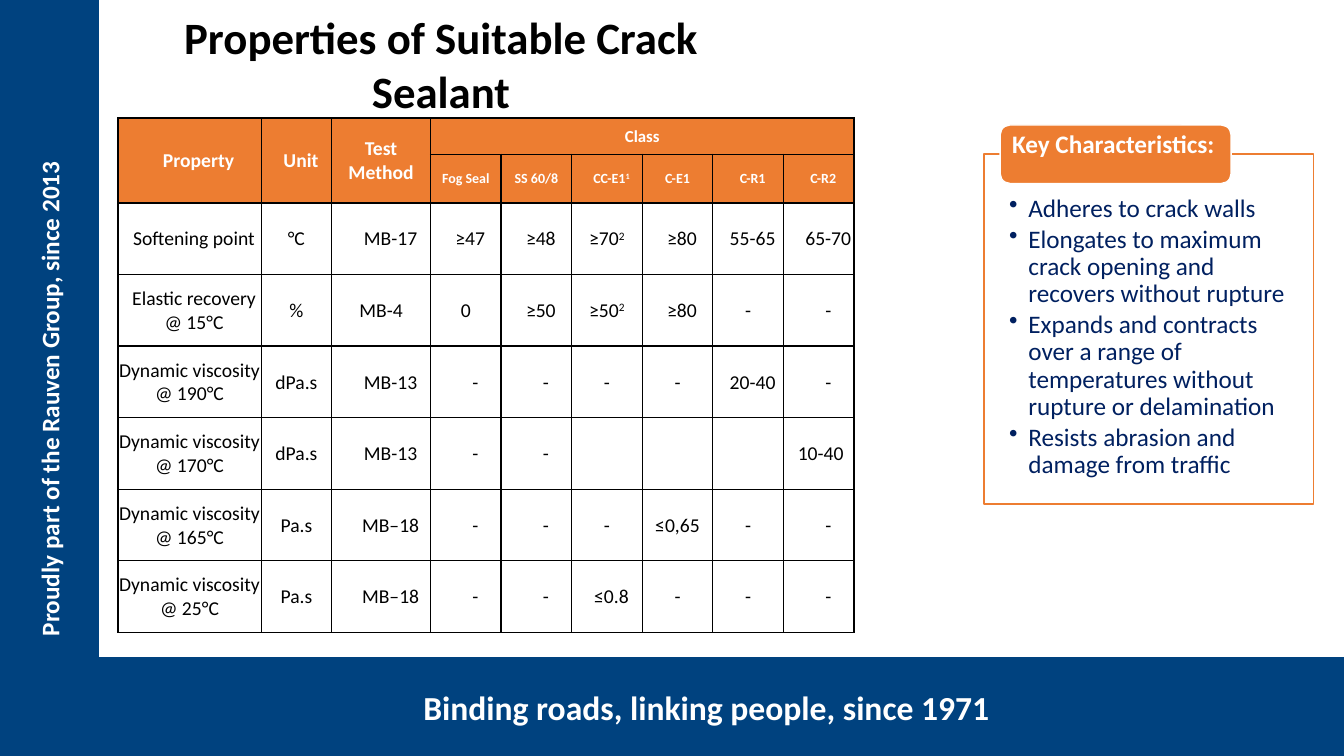
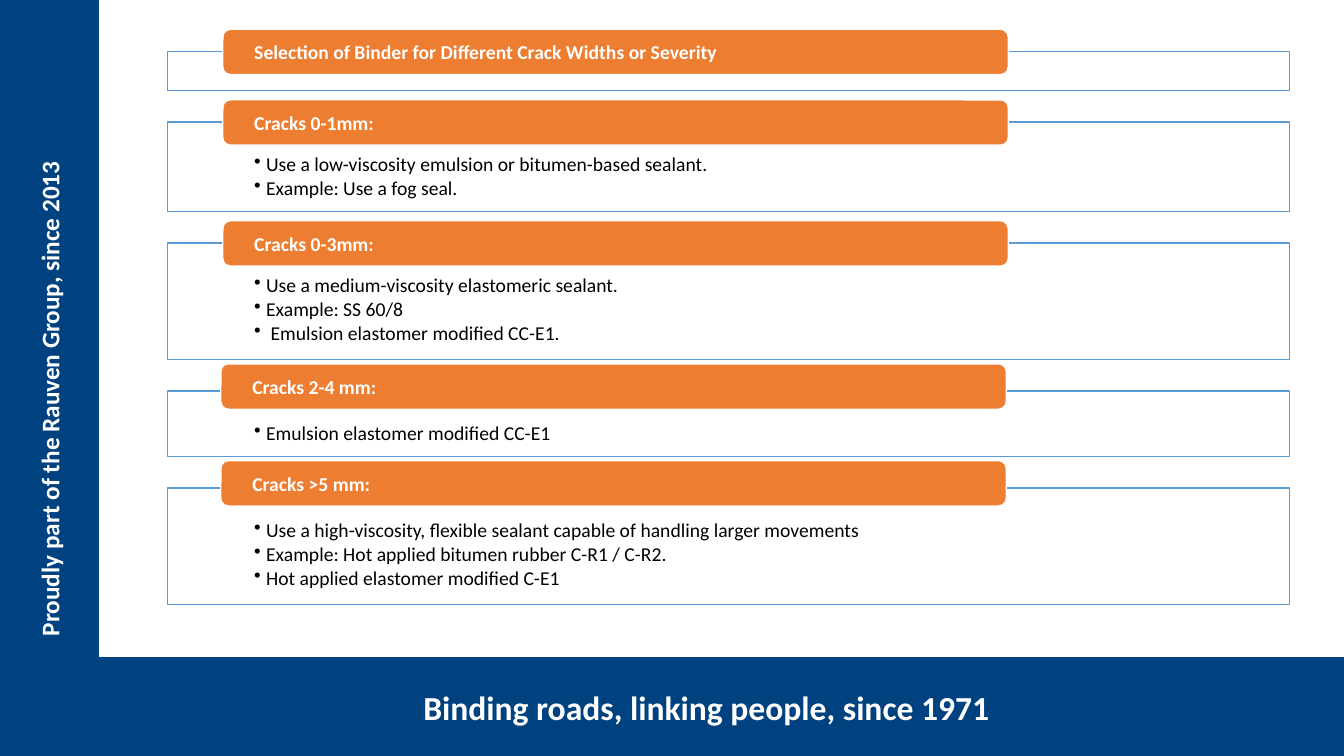
import pptx
import pptx.dml.color
import pptx.enum.shapes
import pptx.enum.text
import pptx.oxml
import pptx.oxml.ns
import pptx.util

PX = 9144
COLORS = {
    "navy": "00427F",
    "orange": "ED7D31",
    "blue": "5B9BD5",
    "ink": "002060",
    "black": "000000",
    "white": "FFFFFF",
}
SHAPES = pptx.enum.shapes.MSO_SHAPE
ANCHOR = pptx.enum.text.MSO_ANCHOR
ALIGN = pptx.enum.text.PP_ALIGN
MARGINS = ("margin_left", "margin_top", "margin_right", "margin_bottom")
TITLE_ONLY, BLANK = 5, 6

KEY_POINTS = [
    "Adheres to crack walls",
    "Elongates to maximum crack opening and recovers without rupture",
    "Expands and contracts over a range of temperatures without rupture or delamination",
    "Resists abrasion and damage from traffic",
]

COLUMN_WIDTHS = [142, 70, 98] + [70] * 6
ROW_HEIGHTS = [36] * 2 + [71] * 6
HEADINGS = [("Property", 19), ("Unit", 10), ("Test Method", 1)]
CLASSES = [("Fog Seal", 1), ("SS 60/8", 1), ("CC-E1^1", 10), ("C-E1", 1), ("C-R1", 10), ("C-R2", 10)]
PROPERTIES = [
    (["Softening point", "°C", "MB-17", "≥47", "≥48", "≥70^2", "≥80", "55-65", "65-70"],
     [10, 1, 20, 10, 10, 1, 10, 10, 20]),
    (["Elastic recovery @ 15°C", "%", "MB-4", "0", "≥50", "≥50^2", "≥80", "-", "-"],
     [10, 1, 1, 1, 10, 1, 10, 1, 20]),
    (["Dynamic viscosity @ 190°C", "dPa.s", "MB-13", "-", "-", "-", "-", "20-40", "-"],
     [1, 1, 20, 20, 20, 1, 1, 10, 20]),
    (["Dynamic viscosity @ 170°C", "dPa.s", "MB-13", "-", "-", "", "", "", "10-40"],
     [1, 1, 20, 20, 20, 1, 1, 1, 5]),
    (["Dynamic viscosity @ 165°C", "Pa.s", "MB–18", "-", "-", "-", "≤0,65", "-", "-"],
     [1, 1, 20, 20, 20, 1, 1, 1, 20]),
    (["Dynamic viscosity @ 25°C", "Pa.s", "MB–18", "-", "-", "≤0.8", "-", "-", "-"],
     [1, 1, 20, 20, 20, 10, 1, 1, 20]),
]

HIGH_TAG, HIGHER_TAG = (55, -22), (53, -27)
BINDERS = [
    ("Selection of Binder for Different Crack Widths or Severity", 39, HIGH_TAG, []),
    ("Cracks 0-1mm:", 89, HIGH_TAG, [
        "Use a low-viscosity emulsion or bitumen-based sealant.",
        "Example: Use a fog seal.",
    ]),
    ("Cracks 0-3mm:", 116, HIGH_TAG, [
        "Use a medium-viscosity elastomeric sealant.",
        "Example: SS 60/8",
        " Emulsion elastomer modified CC-E1.",
    ]),
    ("Cracks 2-4 mm:", 65, HIGHER_TAG, ["Emulsion elastomer modified CC-E1"]),
    ("Cracks >5 mm:", 116, HIGHER_TAG, [
        "Use a high-viscosity, flexible sealant capable of handling larger movements",
        "Example: Hot applied bitumen rubber C-R1 / C-R2.",
        "Hot applied elastomer modified C-E1",
    ]),
]
FIRST_PANEL_TOP, PANEL_GAP = 51, 31


def px(*lengths):
    return [pptx.util.Emu(length * PX) for length in lengths]


def rgb(name):
    return pptx.dml.color.RGBColor.from_string(COLORS[name])


def xml(tag, attributes="", content=""):
    namespace = pptx.oxml.ns.nsdecls("a")
    return pptx.oxml.parse_xml(f"<a:{tag} {namespace} {attributes}>{content}</a:{tag}>")


def apply(target, values):
    for name, value in values.items():
        setattr(target, name, value)


def set_margins(target, margins):
    apply(target, dict(zip(MARGINS, px(*margins))))


def add_run(paragraph, text, size, color, bold=False):
    run = paragraph.add_run()
    run.text = text
    apply(run.font, {"name": "Calibri", "size": pptx.util.Pt(size), "bold": bold})
    run.font.color.rgb = rgb(color)
    return run


def add_bullets(frame, points, size, color, indent):
    for index, point in enumerate(points):
        paragraph = frame.paragraphs[0] if index == 0 else frame.add_paragraph()
        apply(paragraph, {"level": 1, "alignment": ALIGN.LEFT, "line_spacing": 0.9,
                          "space_after": pptx.util.Pt(size * 0.15)})
        properties = paragraph._p.get_or_add_pPr()
        properties.set("marL", str(indent * PX))
        properties.set("indent", str(-indent * PX))
        properties.append(xml("buChar", 'char="•"'))
        add_run(paragraph, point, size, color)


def add_block(slide, kind, box, fill, line=None):
    block = slide.shapes.add_shape(kind, *px(*box))
    block.shadow.inherit = False
    block.fill.solid()
    block.fill.fore_color.rgb = rgb(fill)
    if line:
        block.line.color.rgb = rgb(line)
        block.line.width = pptx.util.Pt(1)
    else:
        block.line.fill.background()
    block.text_frame.word_wrap = True
    return block


def add_panel(slide, box, line, margins):
    panel = add_block(slide, SHAPES.RECTANGLE, box, "white", line)
    panel.fill._xPr.find(".//" + pptx.oxml.ns.qn("a:srgbClr")).append(xml("alpha", 'val="90000"'))
    panel.text_frame.vertical_anchor = ANCHOR.TOP
    set_margins(panel.text_frame, margins)
    return panel.text_frame


def add_tag(slide, box, text, size, margin, anchor):
    tag = add_block(slide, SHAPES.ROUNDED_RECTANGLE, box, "orange", "white")
    tag.text_frame.vertical_anchor = anchor
    set_margins(tag.text_frame, (margin, 0, margin, 0))
    paragraph = tag.text_frame.paragraphs[0]
    paragraph.alignment = ALIGN.LEFT
    add_run(paragraph, text, size, "white", True)


def add_slogan(slide, box, text, size, rotation=0):
    slogan = slide.shapes.add_textbox(*px(*box))
    slogan.rotation = rotation
    slogan.text_frame.word_wrap = True
    add_run(slogan.text_frame.paragraphs[0], text, size, "white", True)
    return slogan


def brand_master(deck, slide):
    parts = [
        add_block(slide, SHAPES.RECTANGLE, (0, 0, 98, 750), "navy"),
        add_block(slide, SHAPES.RECTANGLE, (98, 652, 1235, 98), "navy"),
        add_slogan(slide, (410, 677, 722, 50), "Binding roads, linking people, since 1971", 24),
        add_slogan(slide, (-198, 374, 494, 40), "Proudly part of the Rauven Group, since 2013", 18, 270),
    ]
    for number, part in enumerate(parts, 101):
        part.element.nvSpPr.cNvPr.set("id", str(number))
        deck.slide_master.shapes.element.append(part.element)


def set_title(slide, box, text):
    title = slide.shapes.title
    apply(title, dict(zip(("left", "top", "width", "height"), px(*box))))
    apply(title.text_frame, {"word_wrap": True, "vertical_anchor": ANCHOR.TOP,
                             "auto_size": pptx.enum.text.MSO_AUTO_SIZE.NONE})
    paragraph = title.text_frame.paragraphs[0]
    paragraph.alignment = ALIGN.CENTER
    add_run(paragraph, text, 32, "black", True)


def fill_cell(cell, text, inset, size=14, heading=False):
    cell.vertical_anchor = ANCHOR.MIDDLE
    set_margins(cell, (inset, 1, 1, 0))
    paragraph = cell.text_frame.paragraphs[0]
    paragraph.alignment = ALIGN.CENTER
    base, _, raised = text.partition("^")
    color = "white" if heading else "black"
    if base:
        add_run(paragraph, base, size, color, heading)
    if raised:
        note = add_run(paragraph, raised, size, color, heading)
        note._r.get_or_add_rPr().set("baseline", "30000")


def style_cell(cell, heading):
    stroke = f'<a:solidFill><a:srgbClr val="{COLORS["black"]}"/></a:solidFill>'
    properties = cell._tc.get_or_add_tcPr()
    for side in "LRTB":
        properties.append(xml(f"ln{side}", 'w="12700"', stroke))
    if heading:
        cell.fill.solid()
        cell.fill.fore_color.rgb = rgb("orange")
    else:
        cell.fill.background()


def add_property_table(slide, left, top):
    size = px(left, top, sum(COLUMN_WIDTHS), sum(ROW_HEIGHTS))
    table = slide.shapes.add_table(len(ROW_HEIGHTS), len(COLUMN_WIDTHS), *size).table
    apply(table, {"first_row": False, "horz_banding": False})
    for column, width in zip(table.columns, px(*COLUMN_WIDTHS)):
        column.width = width
    for index, height in enumerate(px(*ROW_HEIGHTS)):
        table.rows[index].height = height
        for column in range(len(COLUMN_WIDTHS)):
            cell = table.cell(index, column)
            set_margins(cell, (1, 1, 1, 0))
            style_cell(cell, index < 2)
    for column, (text, inset) in enumerate(HEADINGS):
        table.cell(0, column).merge(table.cell(1, column))
        fill_cell(table.cell(0, column), text, inset, heading=True)
    table.cell(0, 3).merge(table.cell(0, 8))
    fill_cell(table.cell(0, 3), "Class", 1, 12, True)
    for column, (text, inset) in enumerate(CLASSES, 3):
        fill_cell(table.cell(1, column), text, inset, 10, True)
    for row, (texts, insets) in enumerate(PROPERTIES, 2):
        for column, (text, inset) in enumerate(zip(texts, insets)):
            fill_cell(table.cell(row, column), text, inset)


def build_properties(slide):
    set_title(slide, (150, 5, 575, 112), "Properties of Suitable Crack Sealant")
    points = add_panel(slide, (976, 153, 327, 347), "orange", (25, 41, 25, 14))
    add_bullets(points, KEY_POINTS, 18, "ink", 19)
    add_tag(slide, (992, 124, 229, 58), "Key Characteristics:", 18, 9, ANCHOR.TOP)
    add_property_table(slide, 117, 117)


def build_selection(slide):
    left, top = 166, FIRST_PANEL_TOP
    for heading, height, (shift, rise), points in BINDERS:
        body = add_panel(slide, (left, top, 1113, height), "blue", (86, 32, 86, 11))
        add_bullets(body, points, 14, "black", 12)
        add_tag(slide, (left + shift, top + rise, 779, 45), heading, 14, 29, ANCHOR.MIDDLE)
        top += height + PANEL_GAP


def main():
    deck = pptx.Presentation()
    deck.slide_width, deck.slide_height = px(1333, 750)
    properties = deck.slides.add_slide(deck.slide_layouts[TITLE_ONLY])
    brand_master(deck, properties)
    build_properties(properties)
    build_selection(deck.slides.add_slide(deck.slide_layouts[BLANK]))
    deck.save("out.pptx")


if __name__ == "__main__":
    main()
